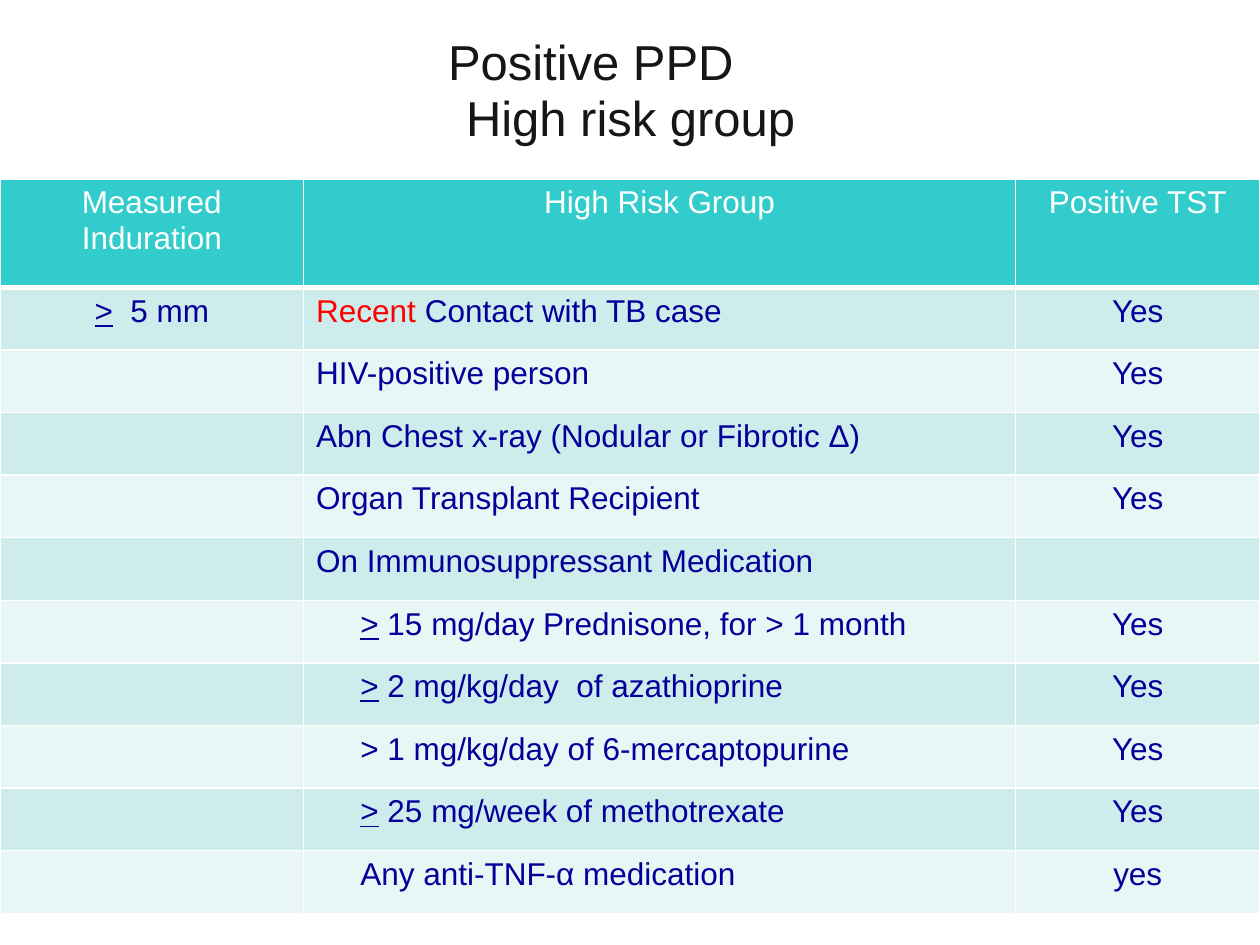
from lxml import etree
from pptx import Presentation
from pptx.dml.color import RGBColor
from pptx.enum.text import MSO_ANCHOR, PP_ALIGN
from pptx.oxml.ns import qn
from pptx.util import Inches, Pt

LEFT, CENTER = PP_ALIGN.LEFT, PP_ALIGN.CENTER
MIDDLE = MSO_ANCHOR.MIDDLE

WHITE = RGBColor(0xFF, 0xFF, 0xFF)
INK = RGBColor(0x16, 0x16, 0x16)
NAVY = RGBColor(0x01, 0x01, 0x99)
RED = RGBColor(0xFF, 0x00, 0x00)
TEAL = RGBColor(0x33, 0xCC, 0xCC)
BANDS = [RGBColor(0xCE, 0xEC, 0xEC), RGBColor(0xE8, 0xF6, 0xF6)]


def add_run(paragraph, text, size, color, underline=False):
    run = paragraph.add_run()
    run.text = text
    run.font.color.rgb = color
    formats = {"name": "Arial", "size": Pt(size), "bold": False, "underline": underline}
    for attribute, value in formats.items():
        setattr(run.font, attribute, value)
    return run


def add_border(cell, side, points):
    line = etree.SubElement(cell._tc.get_or_add_tcPr(), qn(f"a:{side}"), w=str(Pt(points)))
    fill = etree.SubElement(line, qn("a:solidFill"))
    etree.SubElement(fill, qn("a:srgbClr"), val=str(WHITE))


prs = Presentation()
prs.slide_width, prs.slide_height = Inches(10), Inches(7.5)
slide = prs.slides.add_slide(prs.slide_layouts[6])

# Title: the first line sits left of the centre, the second is centred
FIRST_LINE_SHIFT = Inches(0.63)
title = slide.shapes.add_textbox(Inches(0.24), Inches(0.14), Inches(9.53), Inches(1.17))
title_frame = title.text_frame
title_frame.word_wrap = True
title_frame.vertical_anchor = MIDDLE
title_frame.margin_right = Inches(0.1) + FIRST_LINE_SHIFT
first_line, second_line = title_frame.paragraphs[0], title_frame.add_paragraph()
second_line._p.get_or_add_pPr().set("marL", str(FIRST_LINE_SHIFT))
for line, text in [(first_line, "Positive PPD"), (second_line, "High risk group")]:
    line.alignment = CENTER
    line.line_spacing = 0.95
    run = add_run(line, text, 28, INK)
    effects = etree.Element(qn("a:effectLst"))
    shadow = etree.SubElement(effects, qn("a:outerShdw"), dist=str(Pt(2)), dir="2700000")
    etree.SubElement(shadow, qn("a:srgbClr"), val="808080")
    run.font._element.find(qn("a:solidFill")).addnext(effects)

# Table content: each cell is a list of (text, colour, underlined) runs
# Rows: risk group runs, indented, positive TST
AT_LEAST = (">", NAVY, True)
risk_groups = [
    ([("Recent", RED, False), (" Contact with TB case", NAVY, False)], False, "Yes"),
    ([("HIV-positive person", NAVY, False)], False, "Yes"),
    ([("Abn Chest x-ray (Nodular or Fibrotic Δ)", NAVY, False)], False, "Yes"),
    ([("Organ Transplant Recipient", NAVY, False)], False, "Yes"),
    ([("On Immunosuppressant Medication", NAVY, False)], False, ""),
    ([AT_LEAST, (" 15 mg/day Prednisone, for > 1 month", NAVY, False)], True, "Yes"),
    ([AT_LEAST, (" 2 mg/kg/day  of azathioprine", NAVY, False)], True, "Yes"),
    ([("> 1 mg/kg/day of 6-mercaptopurine", NAVY, False)], True, "Yes"),
    ([AT_LEAST, (" 25 mg/week of methotrexate", NAVY, False)], True, "Yes"),
    ([("Any anti-TNF-α medication", NAVY, False)], True, "yes"),
]
headings = ["Measured Induration", "High Risk Group", "Positive TST"]
rows = [[[(heading, WHITE, False)] for heading in headings]]
for group, _, positive in risk_groups:
    rows.append([[], group, [(positive, NAVY, False)] if positive else []])
rows[1][0] = [AT_LEAST, ("  5 mm", NAVY, False)]

# Table grid
TABLE_HEIGHT, HEADER_HEIGHT = Inches(5.83), Inches(0.86)
table = slide.shapes.add_table(
    len(rows), len(headings), Inches(0), Inches(1.42), Inches(10), TABLE_HEIGHT).table
for column, width in zip(table.columns, [2.41, 5.65, 1.94]):
    column.width = Inches(width)
for row in table.rows:
    row.height = (TABLE_HEIGHT - HEADER_HEIGHT) // len(risk_groups)
table.rows[0].height = HEADER_HEIGHT

# Cells
for r, row in enumerate(rows):
    for c, runs in enumerate(row):
        cell = table.cell(r, c)
        for side in ("lnL", "lnR", "lnT", "lnB"):
            add_border(cell, side, 3 if r == 0 and side == "lnB" else 1)
        cell.fill.solid()
        cell.fill.fore_color.rgb = BANDS[(r - 1) % 2] if r else TEAL
        paragraph = cell.text_frame.paragraphs[0]
        paragraph.alignment = LEFT if r and c == 1 else CENTER
        for text, color, underline in runs:
            add_run(paragraph, text, 18, color, underline)

# Medications are indented under their group
for r, (_, indented, _) in enumerate(risk_groups, start=1):
    if indented:
        table.cell(r, 1).margin_left = Inches(0.45)

prs.save("out.pptx")
